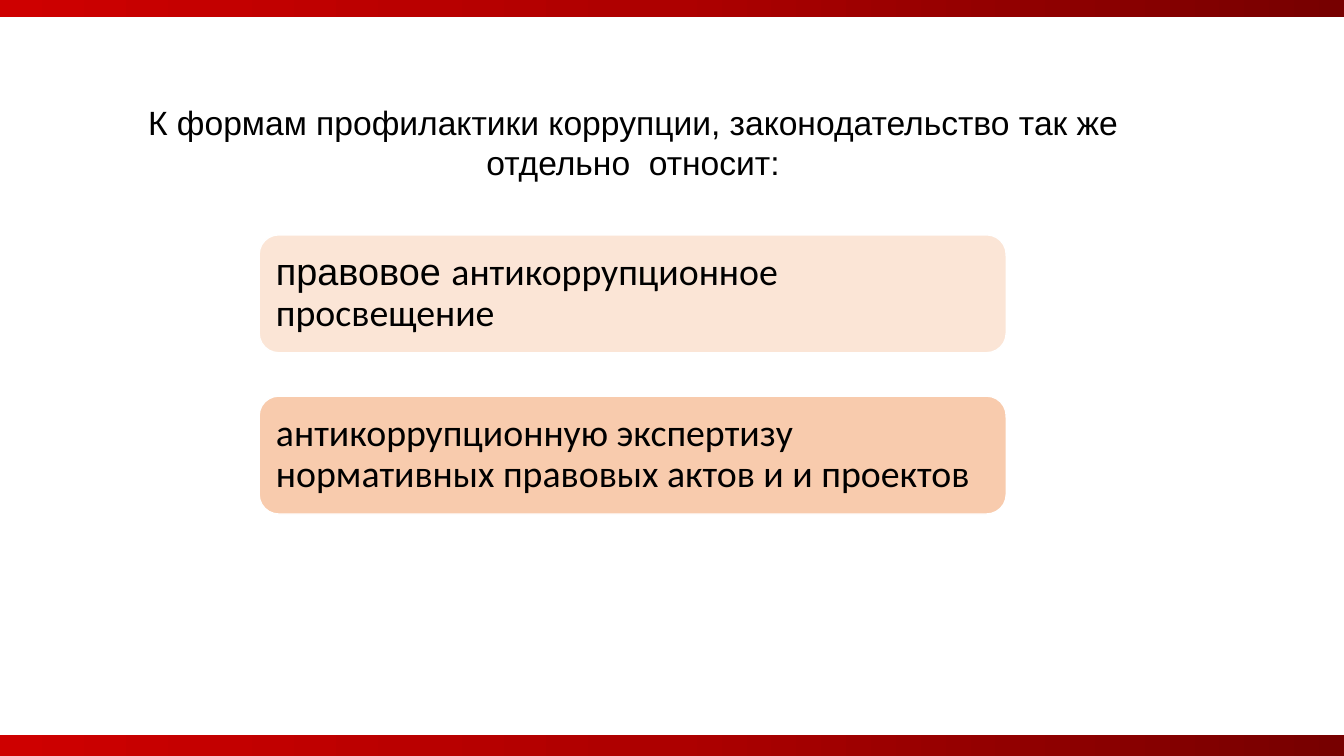
import copy

import pptx
import pptx.dml.color
import pptx.enum.shapes
import pptx.enum.text
import pptx.util

RGB = pptx.dml.color.RGBColor
KIND = pptx.enum.shapes.MSO_SHAPE
ALIGN = pptx.enum.text.PP_ALIGN
ANCHOR = pptx.enum.text.MSO_ANCHOR

BLACK = RGB(0x00, 0x00, 0x00)
WHITE = RGB(0xFF, 0xFF, 0xFF)
PEACH = RGB(0xFB, 0xE5, 0xD6)
APRICOT = RGB(0xF8, 0xCB, 0xAD)
REDS = [RGB(0xCE, 0x00, 0x00), RGB(0xAD, 0x00, 0x00), RGB(0x77, 0x00, 0x00)]

PX = 9144  # 100 px to the inch


def place(kind, *spot):
    shape = slide.shapes.add_shape(kind, *[n * PX for n in spot])
    shape.shadow.inherit = False
    return shape


def write(para, text, font, size):
    run = para.add_run()
    run.text = text
    run.font.name = font
    run.font.size = pptx.util.Pt(size)
    run.font.color.rgb = BLACK


deck = pptx.Presentation()
deck.slide_width = 1333 * PX
deck.slide_height = 750 * PX
slide = deck.slides.add_slide(deck.slide_layouts[6])

# Red bands along the top and bottom edges
for top in (-4, 729):
    band = place(KIND.RECTANGLE, 0, top, 1333, 21)
    band.line.fill.background()
    band.fill.gradient()
    band.fill.gradient_angle = 0
    first = band._element.spPr.xpath(".//a:gs")[0]
    first.addnext(copy.deepcopy(first))
    for i, (stop, red) in enumerate(zip(band.fill.gradient_stops, REDS)):
        stop.position = i / 2
        stop.color.rgb = red

# Heading
head = slide.shapes.add_textbox(65 * PX, 96 * PX, 1126 * PX, 91 * PX).text_frame
head.word_wrap = True
head.paragraphs[0].alignment = ALIGN.CENTER
write(head.paragraphs[0],
      "К формам профилактики коррупции, законодательство так же отдельно  относит:",
      "Arial", 24)

# Forms of prevention
forms = [
    (PEACH, [("правовое ", "Arial"),
             ("антикоррупционное просвещение", "Calibri")]),
    (APRICOT, [("антикоррупционную экспертизу нормативных правовых актов и и проектов",
                "Calibri")]),
]
for i, (tint, parts) in enumerate(forms):
    card = place(KIND.ROUNDED_RECTANGLE, 257, 233 + 160 * i, 741, 117)
    card.fill.solid()
    card.fill.fore_color.rgb = tint
    card.line.color.rgb = WHITE
    card.line.width = pptx.util.Pt(1)
    frame = card.text_frame
    frame.word_wrap = True
    frame.vertical_anchor = ANCHOR.MIDDLE
    frame.margin_left = frame.margin_right = 11 * PX
    frame.margin_top = frame.margin_bottom = 11 * PX
    para = frame.paragraphs[0]
    para.alignment = ALIGN.LEFT
    para.line_spacing = 0.9
    for text, font in parts:
        write(para, text, font, 27)

deck.save("out.pptx")
